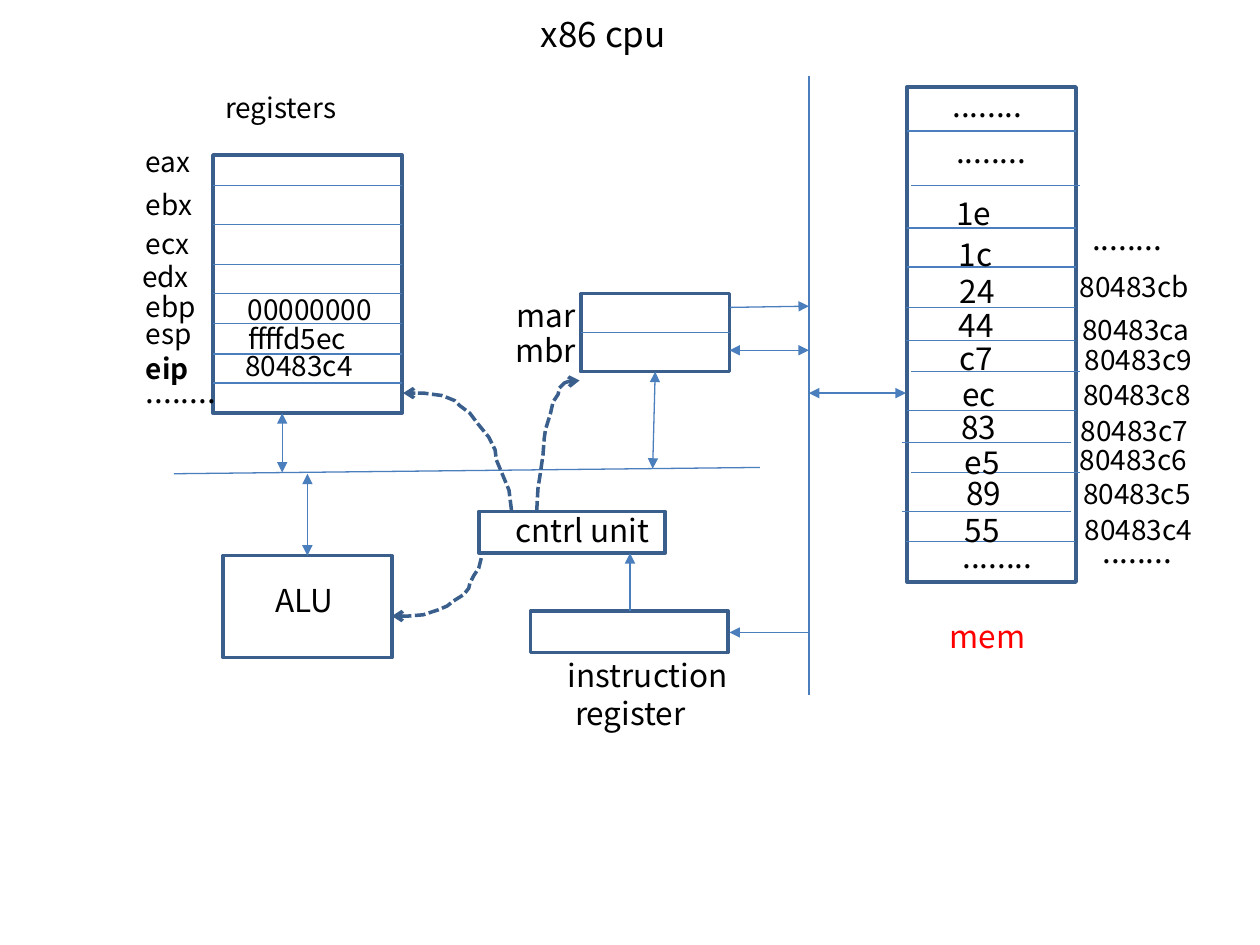
"""Draw the x86 CPU block diagram with its registers, buses and memory."""
from dataclasses import dataclass
from typing import NamedTuple

from pptx import Presentation
from pptx.dml.color import RGBColor
from pptx.enum.dml import MSO_LINE
from pptx.enum.shapes import MSO_CONNECTOR, MSO_SHAPE
from pptx.enum.text import MSO_ANCHOR, MSO_AUTO_SIZE, PP_ALIGN
from pptx.oxml.ns import qn
from pptx.util import Cm, Pt
from lxml.etree import SubElement


@dataclass(frozen=True)
class Theme:
    """Colours, font and sizes."""
    font: str = "Noto Sans CJK KR"
    ink: RGBColor = RGBColor(0, 0, 0)
    accent: RGBColor = RGBColor(0xFF, 0, 0)
    paper: RGBColor = RGBColor(0xFF, 0xFF, 0xFF)
    outline: RGBColor = RGBColor(0x3A, 0x5F, 0x8C)
    wire: RGBColor = RGBColor(0x4B, 0x7E, 0xBC)
    title: int = 20
    large: int = 18
    small: int = 16
    thick: float = 2
    thin: float = 0.75


THEME = Theme()
DOTS = "........"


class Block(NamedTuple):
    """A component box, in inches."""
    left: float
    top: float
    width: float
    height: float


class Label(NamedTuple):
    """A text and its box, in inches."""
    text: str
    left: float
    top: float
    width: float = 0.79
    size: int = THEME.large
    bold: bool = False
    color: RGBColor = THEME.ink


class Wire(NamedTuple):
    """A straight line, with optional arrowheads."""
    x1: float
    y1: float
    x2: float
    y2: float
    head: bool = False
    tail: bool = False


REGISTERS = Block(1.69, 1.23, 1.5, 2.05)
MEMORY = Block(7.2, 0.69, 1.34, 3.93)
ALU = Block(1.77, 4.41, 1.34, 0.81)
BUFFERS = Block(4.61, 2.33, 1.18, 0.62)
CONTROL = Block(3.8, 4.06, 1.48, 0.33)
INSTRUCTION = Block(4.21, 4.85, 1.57, 0.33)
BLOCKS = [REGISTERS, MEMORY, ALU, BUFFERS, CONTROL, INSTRUCTION]

REGISTER_ROWS = [1.47, 1.78, 2.1, 2.33, 2.57, 2.81, 3.04]
MEMORY_ROWS = [
    (7.2, 1.04), (7.23, 1.47), (7.2, 1.81), (7.2, 2.12), (7.19, 2.44), (7.19, 2.7),
    (7.23, 2.95), (7.2, 3.26), (7.16, 3.51), (7.23, 3.75), (7.16, 4.06), (7.19, 4.3),
]
BUS_X = 6.42
WIRES = [
    Wire(1.38, 3.76, 6.03, 3.71),
    Wire(BUS_X, 0.6, BUS_X, 5.52),
    Wire(4.61, 2.64, 5.79, 2.64),
    Wire(BUS_X, 5.02, 5.79, 5.02, tail=True),
    Wire(5, 4.85, 5, 4.39, tail=True),
    Wire(5.79, 2.44, BUS_X, 2.43, tail=True),
    Wire(BUS_X, 3.12, 7.19, 3.12, True, True),
    Wire(5.79, 2.78, BUS_X, 2.78, True, True),
    Wire(2.44, 3.76, 2.44, 4.41, True, True),
    Wire(2.24, 3.28, 2.24, 3.75, True, True),
    Wire(5.2, 2.95, 5.18, 3.72, True, True),
]
CONTROL_SIGNALS = [
    [(3.82, 4.43), (3.8, 4.51), (3.76, 4.57), (3.73, 4.63), (3.72, 4.67), (3.68, 4.72),
     (3.6, 4.77), (3.55, 4.81), (3.48, 4.84), (3.36, 4.88), (3.24, 4.89), (3.11, 4.89)],
    [(4.06, 4.05), (4.04, 3.89), (3.99, 3.77), (3.94, 3.65), (3.93, 3.57), (3.88, 3.47),
     (3.79, 3.36), (3.73, 3.28), (3.65, 3.22), (3.61, 3.18), (3.51, 3.14), (3.36, 3.12),
     (3.2, 3.12)],
    [(4.26, 4.06), (4.27, 3.88), (4.29, 3.75), (4.31, 3.61), (4.32, 3.48), (4.33, 3.41),
     (4.37, 3.28), (4.39, 3.19), (4.43, 3.13), (4.44, 3.08), (4.48, 3.04), (4.53, 3.02),
     (4.6, 3.02)],
]

REGISTER_NAMES = [
    ("eax", 1.06, 1.1), ("ebx", 1.06, 1.44), ("ecx", 1.06, 1.75),
    ("edx", 1.03, 2.01), ("ebp", 1.06, 2.25), ("esp", 1.06, 2.46),
]
ADDRESSES = [
    ("80483cb", 8.47, 2.09), ("80483ca", 8.49, 2.43), ("80483c9", 8.51, 2.67),
    ("80483c8", 8.5, 2.95), ("80483c7", 8.48, 3.23), ("80483c6", 8.47, 3.46),
    ("80483c5", 8.5, 3.73), ("80483c4", 8.51, 4.02),
]
BYTES = [
    ("1e", 7.49, 1.49), ("1c", 7.51, 1.82), ("24", 7.52, 2.11), ("44", 7.51, 2.38),
    ("c7", 7.52, 2.64), ("ec", 7.54, 2.93), ("83", 7.53, 3.19), ("e5", 7.56, 3.47),
    ("89", 7.57, 3.71), ("55", 7.56, 4.01),
]
ELLIPSES = [(1.06, 2.9), (7.46, 0.63), (7.49, 1), (7.54, 4.21), (8.57, 1.69), (8.65, 4.17)]
LABELS = [
    Label("registers", 1.69, 0.67, 1.18, THEME.small),
    *(Label(*name, size=THEME.small) for name in REGISTER_NAMES),
    Label("eip", 1.06, 2.74, size=THEME.small, bold=True),
    Label("00000000", 1.87, 2.27, 1.23, THEME.small),
    Label("ffffd5ec", 1.87, 2.5, 1.18, THEME.small),
    Label("80483c4", 1.85, 2.72, 1.18, THEME.small),
    *(Label(*address, 1.18, THEME.small) for address in ADDRESSES),
    *(Label(*byte, 0.55) for byte in BYTES),
    *(Label(DOTS, *place) for place in ELLIPSES),
    Label("mem", 7.44, 4.85, 1.06, color=THEME.accent),
    Label("ALU", 2.09, 4.56),
    Label("cntrl unit", 3.99, 4.01, 1.31),
    Label("mar", 4, 2.3),
    Label("mbr", 3.99, 2.58),
    Label("instruction\n register", 4.41, 5.16, 1.57),
]


def inches(value: float) -> Cm:
    """Convert inches to a centimetre length."""
    return Cm(value * 2.54)


def style_text(frame, size: int, color: RGBColor, bold: bool = False) -> None:
    """Format every paragraph of a text frame."""
    for para in frame.paragraphs:
        para.font.name, para.font.size, para.font.bold = THEME.font, Pt(size), bold
        para.font.color.rgb = color


def style_line(line, color: RGBColor, width: float) -> None:
    """Set the colour and width of a line."""
    line.color.rgb, line.width = color, Pt(width)


def add_arrowhead(shape, end: str, kind: str) -> None:
    """Put an arrowhead on one end of a line."""
    SubElement(shape._element.spPr.find(qn("a:ln")), qn(f"a:{end}"), type=kind)


def draw_title(page, text: str) -> None:
    """Place the slide title."""
    title = page.shapes.title
    title.left, title.top, title.width, title.height = map(inches, (0.29, -0.12, 9, 0.77))
    title.text_frame.text = text
    title.text_frame.vertical_anchor = MSO_ANCHOR.MIDDLE
    title.text_frame.paragraphs[0].alignment = PP_ALIGN.CENTER
    style_text(title.text_frame, THEME.title, THEME.ink)


def draw_block(page, block: Block) -> None:
    """Draw a component box."""
    box = page.shapes.add_shape(MSO_SHAPE.RECTANGLE, *map(inches, block))
    box.shadow.inherit = False
    box.fill.solid()
    box.fill.fore_color.rgb = THEME.paper
    style_line(box.line, THEME.outline, THEME.thick)


def draw_wire(page, wire: Wire) -> None:
    """Draw a straight line with its arrowheads."""
    line = page.shapes.add_connector(MSO_CONNECTOR.STRAIGHT, *map(inches, wire[:4]))
    style_line(line.line, THEME.wire, THEME.thin)
    if wire.head:
        add_arrowhead(line, "headEnd", "triangle")
    if wire.tail:
        add_arrowhead(line, "tailEnd", "triangle")
    SubElement(line._element.spPr, qn("a:effectLst"))


def draw_signal(page, points: list[tuple[float, float]]) -> None:
    """Draw a dashed control signal through its points."""
    start, *rest = [(inches(x), inches(y)) for x, y in points]
    builder = page.shapes.build_freeform(*start)
    builder.add_line_segments(rest, close=False)
    signal = builder.convert_to_shape()
    signal.shadow.inherit = False
    signal.fill.background()
    style_line(signal.line, THEME.outline, THEME.thick)
    signal.line.dash_style = MSO_LINE.SQUARE_DOT
    add_arrowhead(signal, "tailEnd", "arrow")


def draw_label(page, label: Label) -> None:
    """Draw a text box."""
    lines = label.text.count("\n") + 1
    height = 0.1 + lines * label.size / 60
    box = page.shapes.add_textbox(*map(inches, (label.left, label.top, label.width, height)))
    frame = box.text_frame
    frame.word_wrap, frame.auto_size = True, MSO_AUTO_SIZE.SHAPE_TO_FIT_TEXT
    frame.text = label.text
    style_text(frame, label.size, label.color, label.bold)


def main() -> None:
    """Build and save the deck."""
    deck = Presentation()
    deck.slide_width, deck.slide_height = inches(10), inches(7.5)
    page = deck.slides.add_slide(deck.slide_layouts[5])
    draw_title(page, "x86 cpu")
    for block in BLOCKS:
        draw_block(page, block)
    rows = [(REGISTERS.left, y, REGISTERS.width) for y in REGISTER_ROWS]
    rows += [(x, y, MEMORY.width) for x, y in MEMORY_ROWS]
    for wire in [Wire(x, y, x + width, y) for x, y, width in rows] + WIRES:
        draw_wire(page, wire)
    for points in CONTROL_SIGNALS:
        draw_signal(page, points)
    for label in LABELS:
        draw_label(page, label)
    deck.save("out.pptx")


if __name__ == "__main__":
    main()
